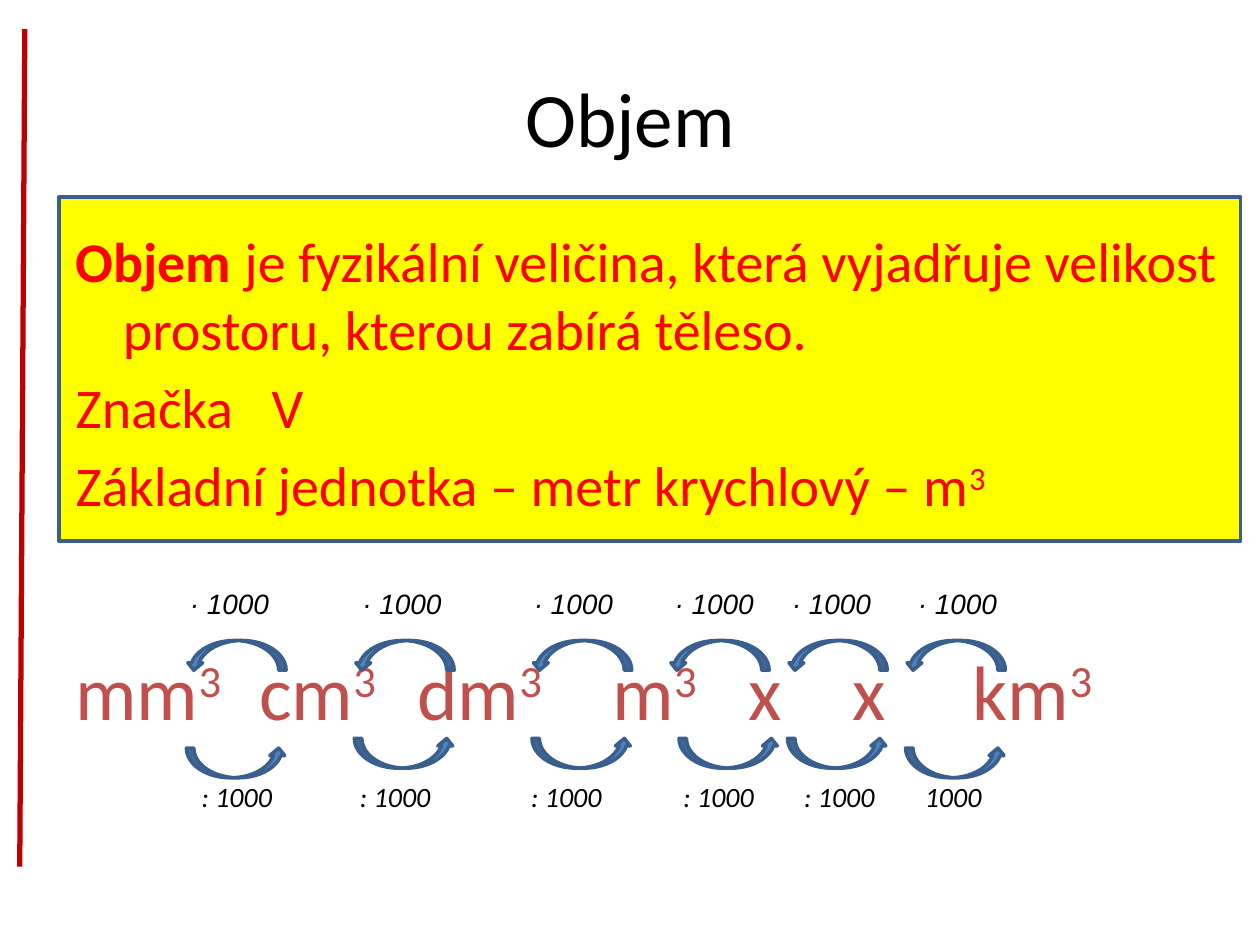
import pptx
import pptx.dml.color
import pptx.enum.shapes
import pptx.enum.text
import pptx.oxml.ns
import pptx.util
import lxml.etree

Pt = pptx.util.Pt
RED = "FF0000"
BLACK = "000000"
OUTLINE = "3A5F8C"
UNITS = [("mm", 43.2), ("cm", 148.2), ("dm", 238.5), ("m", 350), ("x", 428), ("x", 487), ("km", 556)]
MULTIPLIER_LEFTS = [108.5, 207, 305, 385.5, 452.5, 524.5]
DIVISORS = [": 1000"] * 5 + ["1000"]
DIVISOR_LEFTS = [115.2, 205.7, 303.5, 390.5, 459.5, 528.5]
UPPER_ARROWS = [(106.5, 366), (202.5, 366), (304, 366), (382.5, 366), (450, 366), (517.5, 366)]
LOWER_ARROWS = [(106.5, 427.5), (202.5, 422), (304, 422), (388, 422), (450, 422), (517.5, 427.5)]


def color(hex_text):
    return pptx.dml.color.RGBColor.from_string(hex_text)


def add_element(parent, tag):
    return lxml.etree.SubElement(parent, pptx.oxml.ns.qn(tag))


def place(shape, left, top, width, height):
    shape.left, shape.top = Pt(left), Pt(top)
    shape.width, shape.height = Pt(width), Pt(height)


def write_paragraph(paragraph, pieces, size, hex_text, font="Calibri", italic=False):
    paragraph.text = pieces[0]
    for piece in pieces[1:]:
        paragraph.add_run().text = piece
    for run in paragraph.runs:
        run.font.name = font
        run.font.size = Pt(size)
        run.font.italic = italic
        run.font.color.rgb = color(hex_text)


def remove_bullet(paragraph, hanging):
    paragraph.space_before = Pt(6.4)
    properties = paragraph._p.get_or_add_pPr()
    properties.set("marL", str(Pt(hanging)))
    properties.set("indent", str(-Pt(hanging)))
    add_element(properties, "a:buNone")


def raise_runs(runs):
    for run in runs:
        run._r.get_or_add_rPr().set("baseline", "30000")


def add_label(slide, box, pieces, size, hex_text, font="Calibri", italic=False):
    label = slide.shapes.add_textbox(*map(Pt, box))
    frame = label.text_frame
    frame.word_wrap = True
    frame.margin_left = frame.margin_right = frame.margin_top = frame.margin_bottom = 0
    write_paragraph(frame.paragraphs[0], pieces, size, hex_text, font, italic)
    raise_runs(frame.paragraphs[0].runs[1:])


def add_filled_shape(slide, kind, box, fill):
    shape = slide.shapes.add_shape(kind, *map(Pt, box))
    shape.shadow.inherit = False
    shape.fill.solid()
    shape.fill.fore_color.rgb = color(fill)
    shape.line.color.rgb = color(OUTLINE)
    shape.line.width = Pt(2)
    return shape


def add_arrows(slide, positions, rotation):
    kind = pptx.enum.shapes.MSO_SHAPE.CURVED_UP_ARROW
    for left, top in positions:
        arrow = add_filled_shape(slide, kind, (left, top, 57, 17), "4F81BD")
        arrow.rotation = rotation


def fill_title(slide):
    title = slide.shapes.title
    place(title, 36, 21.6, 648, 90)
    write_paragraph(title.text_frame.paragraphs[0], ["Objem"], 44, BLACK)


def fill_body(slide):
    body = slide.placeholders[1]
    place(body, 36, 126, 667.5, 356.5)
    frame = body.text_frame
    frame.auto_size = pptx.enum.text.MSO_AUTO_SIZE.NONE
    sentence = " je fyzikální veličina, která vyjadřuje velikost prostoru, kterou zabírá těleso."
    definition = frame.paragraphs[0]
    symbol = frame.add_paragraph()
    base_unit = frame.add_paragraph()
    write_paragraph(definition, ["Objem", sentence], 32, RED)
    write_paragraph(symbol, ["Značka\tV"], 32, RED)
    write_paragraph(base_unit, ["Základní jednotka – metr krychlový – m", "3"], 32, RED)
    for paragraph, hanging in [(definition, 27), (symbol, 4), (base_unit, 27)]:
        remove_bullet(paragraph, hanging)
    definition.runs[0].font.bold = True
    raise_runs(base_unit.runs[1:])


def add_unit_row(slide):
    for unit, left in UNITS:
        pieces = [unit] if unit == "x" else [unit, "3"]
        add_label(slide, (left, 368, 100, 54), pieces, 44, "C0504D")


def add_factor_rows(slide):
    for left in MULTIPLIER_LEFTS:
        add_label(slide, (left, 335, 60, 19.5), ["· 1000"], 16, BLACK, "Arial", True)
    for text, left in zip(DIVISORS, DIVISOR_LEFTS):
        add_label(slide, (left, 445.5, 60, 19.5), [text], 16, BLACK, italic=True)


def add_margin_line(slide):
    kind = pptx.enum.shapes.MSO_CONNECTOR.STRAIGHT
    line = slide.shapes.add_connector(kind, Pt(14.2), Pt(16.6), Pt(11.3), Pt(495.2))
    line.line.color.rgb = color("C00000")
    line.line.width = Pt(3)
    add_element(line._element.spPr, "a:effectLst")


def main():
    presentation = pptx.Presentation()
    presentation.slide_width, presentation.slide_height = Pt(720), Pt(540)
    slide = presentation.slides.add_slide(presentation.slide_layouts[1])
    rectangle = pptx.enum.shapes.MSO_SHAPE.RECTANGLE
    panel = add_filled_shape(slide, rectangle, (33.8, 112.5, 675.2, 196.8), "FFFF00")
    slide.shapes._spTree.insert(2, panel._element)
    fill_title(slide)
    fill_body(slide)
    add_unit_row(slide)
    add_factor_rows(slide)
    add_arrows(slide, UPPER_ARROWS, 180)
    add_arrows(slide, LOWER_ARROWS, 0)
    add_margin_line(slide)
    presentation.save("out.pptx")


if __name__ == "__main__":
    main()
